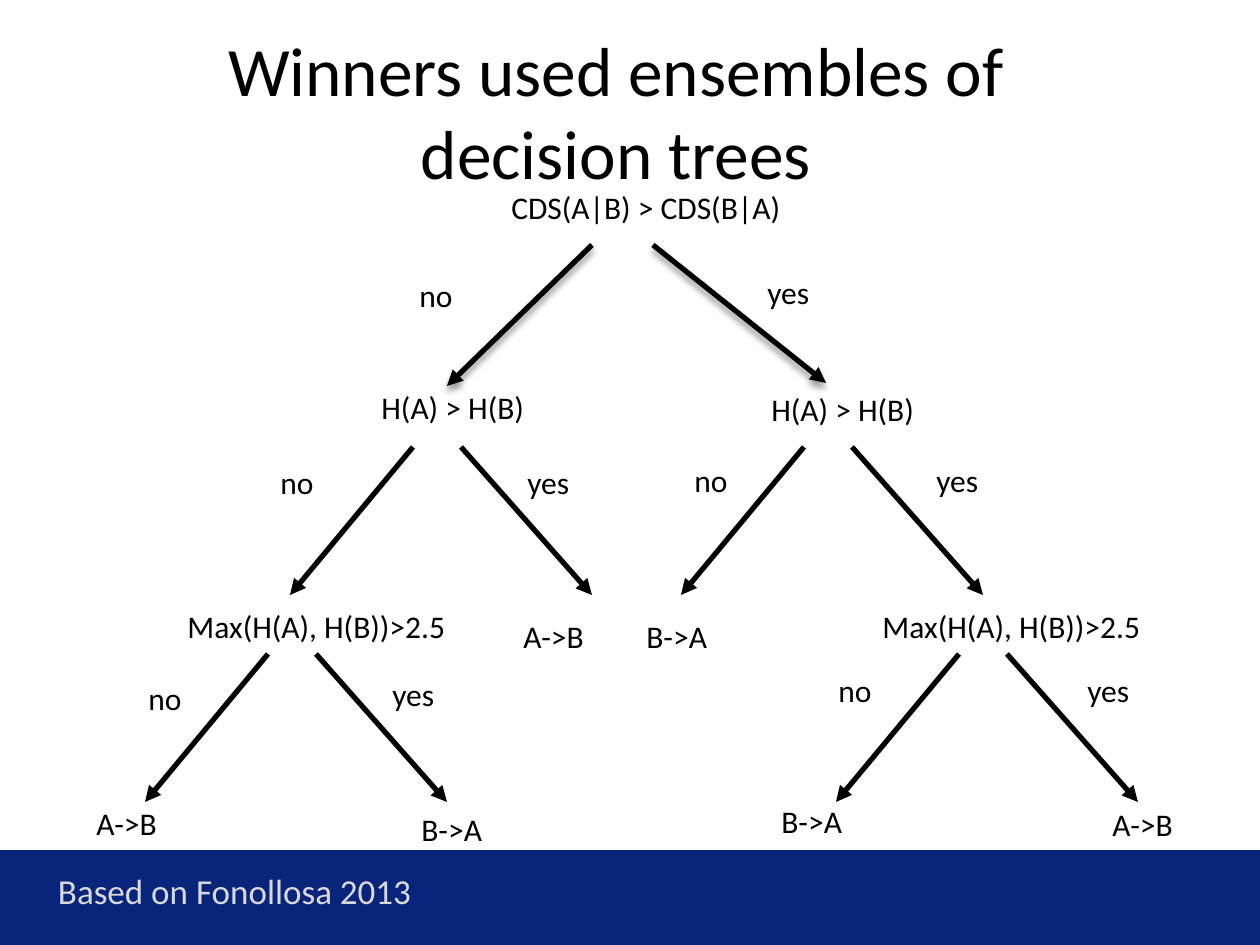
from lxml import etree
from pptx import Presentation
from pptx.dml.color import RGBColor
from pptx.enum.shapes import MSO_CONNECTOR, MSO_SHAPE
from pptx.enum.text import MSO_ANCHOR, PP_ALIGN
from pptx.oxml import parse_xml
from pptx.oxml.ns import qn
from pptx.util import Emu, Pt

STRAIGHT = MSO_CONNECTOR.STRAIGHT
RECTANGLE = MSO_SHAPE.RECTANGLE
MIDDLE = MSO_ANCHOR.MIDDLE
CENTER = PP_ALIGN.CENTER

PX = 914400 / 126
FONT = "Calibri"
BLACK = "000000"
SHADOW = (
    '<a:effectLst xmlns:a="http://schemas.openxmlformats.org/drawingml/2006/main">'
    '<a:outerShdw blurRad="50800" dist="38100" dir="5400000" rotWithShape="0">'
    '<a:srgbClr val="000000"><a:alpha val="40000"/></a:srgbClr>'
    '</a:outerShdw></a:effectLst>'
)


def add_text(text, left, top, width, height=50, size=18, color=BLACK, wrap=False):
    box = slide.shapes.add_textbox(*[Emu(round(v * PX)) for v in (left, top, width, height)])
    frame = box.text_frame
    frame.word_wrap = wrap
    paragraph = frame.paragraphs[0]
    paragraph.text = text
    paragraph.font.name = FONT
    paragraph.font.size = Pt(size)
    paragraph.font.color.rgb = RGBColor.from_string(color)
    return frame


def add_arrow(start, end, shadowed=False):
    arrow = slide.shapes.add_connector(STRAIGHT, *[Emu(round(v * PX)) for v in start + end])
    arrow.line.color.rgb = RGBColor.from_string(BLACK)
    arrow.line.width = Pt(3)
    etree.SubElement(arrow.line._get_or_add_ln(), qn("a:tailEnd"), type="triangle")
    properties = arrow._element.spPr
    if shadowed:
        properties.append(parse_xml(SHADOW))
    else:
        etree.SubElement(properties, qn("a:effectLst"))


prs = Presentation()
prs.slide_width = Emu(round(1260 * PX))
prs.slide_height = Emu(round(945 * PX))
slide = prs.slides.add_slide(prs.slide_layouts[6])

footer_band = slide.shapes.add_shape(
    RECTANGLE, 0, Emu(round(850 * PX)), prs.slide_width, Emu(round(95 * PX))
)
footer_band.shadow.inherit = False
footer_band.fill.solid()
footer_band.fill.fore_color.rgb = RGBColor.from_string("08247B")
footer_band.line.fill.background()

title = add_text("Winners used ensembles of decision trees", 146, 32, 940, 157, 39.6, wrap=True)
title.vertical_anchor = MIDDLE
title.paragraphs[0].alignment = CENTER

add_arrow((592, 245), (447, 386), shadowed=True)
add_arrow((653, 245), (826, 383), shadowed=True)
for x, y in [(413, 447), (804, 447), (268, 654), (959, 654)]:
    add_arrow((x, y), (x - 123, y + 148))
    add_arrow((x + 48, y), (x + 179, y + 148))

labels = [
    ("CDS(A|B) > CDS(B|A)", 305, [(499, 182)]),
    ("H(A) > H(B)", 178, [(369, 382), (759, 384)]),
    ("Max(H(A), H(B))>2.5", 293, [(175, 601), (870, 601)]),
    ("no", 59, [(407, 270), (268, 457), (682, 455), (136, 673), (826, 665)]),
    ("yes", 68, [(755, 267), (515, 457), (924, 455), (380, 669), (1075, 665)]),
    ("A->B", 87, [(511, 611), (84, 798), (1100, 799)]),
    ("B->A", 87, [(634, 611), (409, 804), (769, 796)]),
]
for text, width, places in labels:
    for left, top in places:
        add_text(text, left, top, width)

credit = add_text("Based on Fonollosa 2013", 38, 858, 398, 72, 20, "D9D9D9")
credit.margin_left = credit.margin_right = Emu(round(20 * PX))
credit.margin_top = credit.margin_bottom = Emu(round(16 * PX))
credit.paragraphs[0].line_spacing = 0.9
credit.paragraphs[0].space_after = Pt(4.9)

prs.save("out.pptx")
